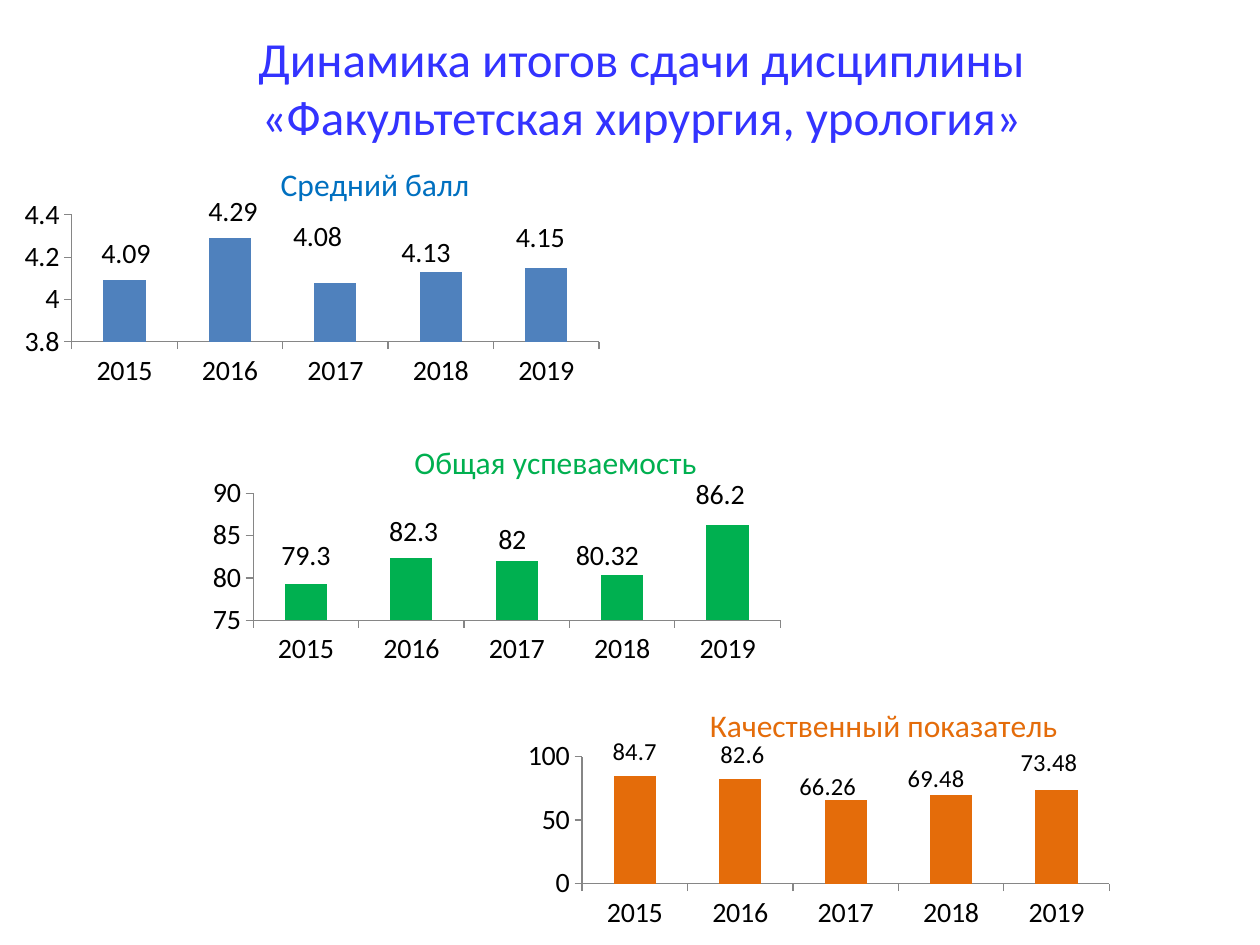
from lxml import etree
from pptx import Presentation
from pptx.chart.data import CategoryChartData
from pptx.dml.color import RGBColor
from pptx.enum.chart import XL_CHART_TYPE, XL_LABEL_POSITION, XL_TICK_MARK
from pptx.enum.text import MSO_ANCHOR, PP_ALIGN
from pptx.oxml.ns import qn
from pptx.util import Inches, Pt

COLUMNS = XL_CHART_TYPE.COLUMN_CLUSTERED
OUTSIDE_END = XL_LABEL_POSITION.OUTSIDE_END
TICK_OUT = XL_TICK_MARK.OUTSIDE
MIDDLE = MSO_ANCHOR.MIDDLE
CENTER = PP_ALIGN.CENTER

FONT = "Calibri"
COLORS = {
    "heading": "3333FF", "text": "000000", "axis": "868686",
    "score_title": "0070C0", "score": "4F81BD",
    "pass": "00B050", "quality": "E46C0A",
}
YEARS = ["2015", "2016", "2017", "2018", "2019"]
CHART_W, CHART_H = 5.91, 2.05
C15 = "http://schemas.microsoft.com/office/drawing/2012/chart"
LABELS_EXT = "{CE6537A1-D6FC-4f65-9D91-7224C49458BB}"

# Title places and label shifts are percentages of the chart's size.
CHARTS = [
    dict(title="Средний балл", title_color="score_title", color="score",
         left=0.02, top=1.15, title_x=36.6, scale=(3.8, 4.4, 0.2), label_size=16,
         values=[4.09, 4.29, 4.08, 4.13, 4.15],
         shifts=[(0.2, -1.5), (0.4, -1.5), (-2.4, -9), (-2, 1.2), (-0.8, -2.8)]),
    dict(title="Общая успеваемость", title_color="pass", color="pass",
         left=1.46, top=3.36, title_x=30.2, scale=(75, 90, 5), label_size=16,
         values=[79.3, 82.3, 82, 80.32, 86.2],
         shifts=[(0, -2), (0.3, -1.5), (-0.6, 0.6), (-2, 1.2), (-1, -3)]),
    dict(title="Качественный показатель", title_color="quality", color="quality",
         left=4.07, top=5.45, title_x=25.7, scale=(0, 100, 50), label_size=14,
         values=[84.7, 82.6, 66.26, 69.48, 73.48],
         shifts=[(0, -1.5), (0.3, -1.4), (-2.4, 3), (-2, 1.5), (-1, -3)]),
]


def rgb(name):
    return RGBColor.from_string(COLORS[name])


def set_layout(parent, index, modes, **percents):
    """Give a chart element a manual layout, as its child at the index."""
    for old in parent.findall(qn("c:layout")):
        parent.remove(old)
    layout = etree.Element(qn("c:layout"))
    manual = etree.SubElement(layout, qn("c:manualLayout"))
    for tag, value in modes.items():
        etree.SubElement(manual, qn("c:" + tag)).set("val", value)
    for tag, value in percents.items():
        etree.SubElement(manual, qn("c:" + tag)).set("val", f"{value / 100:.4f}")
    parent.insert(index, layout)


prs = Presentation()
prs.slide_width, prs.slide_height = Inches(10), Inches(7.5)
s = prs.slides.add_slide(prs.slide_layouts[6])
edges = {"xMode": "edge", "yMode": "edge"}

for row in CHARTS:
    data = CategoryChartData()
    data.categories = YEARS
    data.add_series("Series 1", row["values"])
    chart = s.shapes.add_chart(
        COLUMNS, Inches(row["left"]), Inches(row["top"]),
        Inches(CHART_W), Inches(CHART_H), data).chart
    chart.has_legend = False
    chart.font.name, chart.font.size = FONT, Pt(18)
    chart.font.color.rgb = rgb("text")

    tf = chart.chart_title.text_frame
    tf.text = row["title"]
    font = tf.paragraphs[0].runs[0].font
    font.name, font.size, font.bold = FONT, Pt(18), False
    font.color.rgb = rgb(row["title_color"])
    chart_xml = chart._chartSpace.chart
    set_layout(chart_xml.find(qn("c:title")), 1, edges, x=row["title_x"], y=4.5)
    set_layout(chart_xml.plotArea, 0, {"layoutTarget": "inner", **edges},
               x=9.3, y=27.1, w=70.8, h=49.2)

    for axis in (chart.category_axis, chart.value_axis):
        axis.has_major_gridlines = False
        axis.major_tick_mark = TICK_OUT
        axis.tick_labels.font.size = Pt(16)
        axis.format.line.color.rgb = rgb("axis")
        axis.format.line.width = Pt(0.75)
    axis = chart.value_axis
    axis.minimum_scale, axis.maximum_scale, axis.major_unit = row["scale"]

    plot = chart.plots[0]
    plot.gap_width = 150
    plot.vary_by_categories = False
    series = plot.series[0]
    series.format.fill.solid()
    series.format.fill.fore_color.rgb = rgb(row["color"])
    labels = series.data_labels
    labels.show_value = True
    point_labels = [series.points[i].data_label for i in range(len(YEARS))]
    for label in [labels, *point_labels]:
        label.position = OUTSIDE_END
        label.font.size = Pt(row["label_size"])
        label.font.color.rgb = rgb("text")
    labels_xml = labels._element
    for label_xml, (dx, dy) in zip(labels_xml.findall(qn("c:dLbl")), row["shifts"]):
        set_layout(label_xml, 1, {}, x=dx, y=dy)

    # Shifted labels get leader lines unless both settings turn them off.
    for lines in labels_xml.findall(qn("c:showLeaderLines")):
        lines.set("val", "0")
    ext_list = etree.SubElement(labels_xml, qn("c:extLst"))
    ext = etree.SubElement(ext_list, qn("c:ext"), uri=LABELS_EXT)
    etree.SubElement(ext, f"{{{C15}}}showLeaderLines", nsmap={"c15": C15}).set("val", "0")

sp = s.shapes.add_textbox(Inches(0.59), Inches(0.13), Inches(9), Inches(1.12))
tf = sp.text_frame
tf.word_wrap = True
tf.vertical_anchor = MIDDLE
tf.text = "Динамика итогов сдачи дисциплины\n«Факультетская хирургия, урология»"
for p in tf.paragraphs:
    p.alignment = CENTER
    for r in p.runs:
        r.font.name, r.font.size = FONT, Pt(28)
        r.font.color.rgb = rgb("heading")

prs.save("out.pptx")
